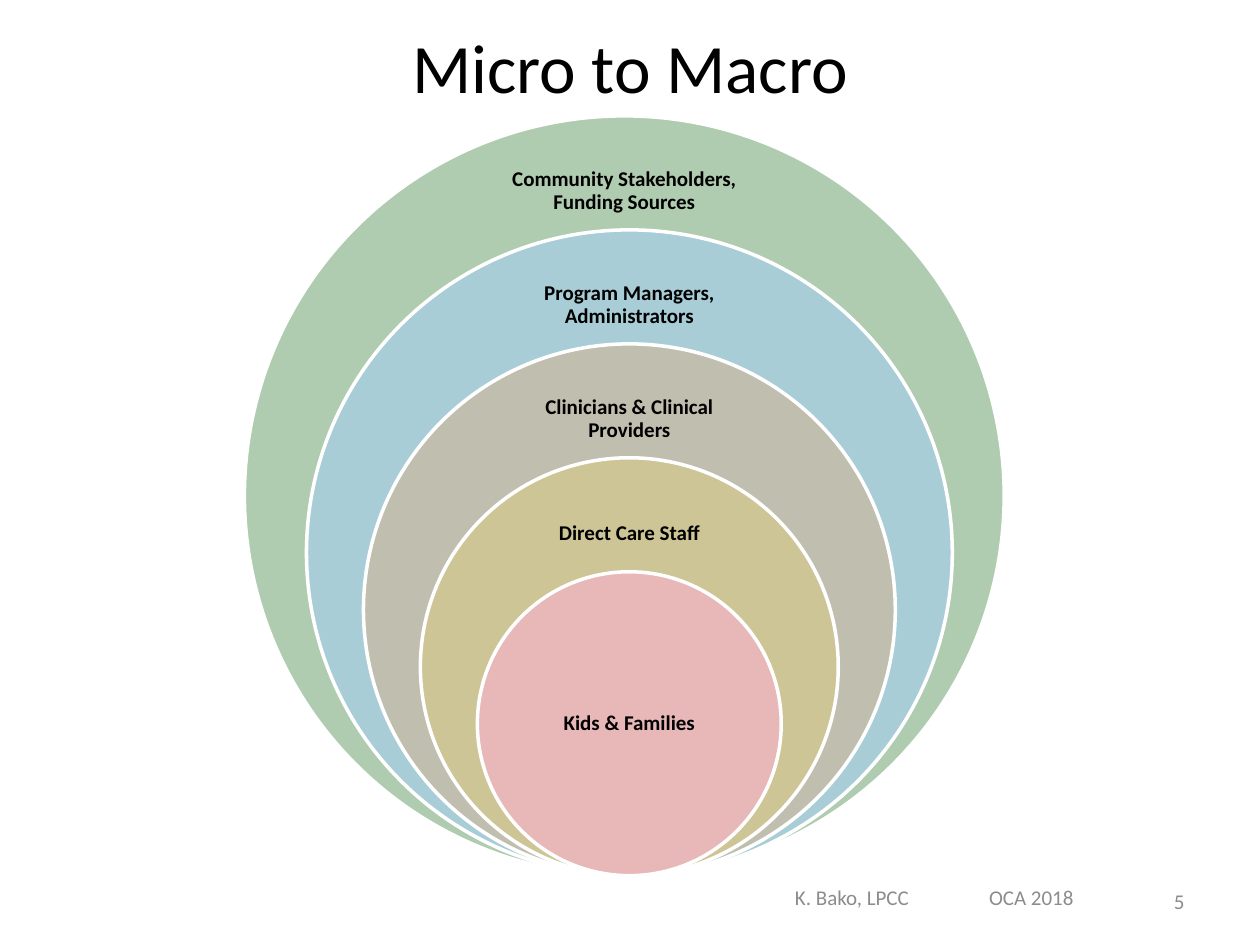
from lxml.etree import SubElement
from pptx import Presentation
from pptx.dml.color import RGBColor
from pptx.enum.shapes import MSO_SHAPE
from pptx.enum.text import MSO_ANCHOR, MSO_AUTO_SIZE, PP_ALIGN
from pptx.oxml.ns import qn
from pptx.util import Inches, Pt

FONT = "Calibri"
BLACK = RGBColor(0x00, 0x00, 0x00)
WHITE = RGBColor(0xFF, 0xFF, 0xFF)
GRAY = RGBColor(0x8C, 0x8C, 0x8C)
GREEN = RGBColor(0xB0, 0xCC, 0xB0)
BLUE = RGBColor(0xA8, 0xCD, 0xD7)
TAUPE = RGBColor(0xC0, 0xBE, 0xAF)
OLIVE = RGBColor(0xCE, 0xC5, 0x97)
PINK = RGBColor(0xE8, 0xB7, 0xB7)

# Label, fill, label width and horizontal shift, from the outer circle inwards
LEVELS = [
    ("Community Stakeholders, Funding Sources", GREEN, 2.26, -0.04),
    ("Program Managers, Administrators", BLUE, 2.21, 0),
    ("Clinicians & Clinical Providers", TAUPE, 2.18, 0),
    ("Direct Care Staff", OLIVE, 1.79, 0),
    ("Kids & Families", PINK, 1.7, 0),
]
DIAMETER_STEP = 0.15  # share of the outer diameter lost at each level


def format_text(shape, text, size, color, alignment, bold=False):
    frame = shape.text_frame
    frame.word_wrap = True
    frame.auto_size = MSO_AUTO_SIZE.NONE
    frame.vertical_anchor = MSO_ANCHOR.MIDDLE
    frame.text = text
    paragraph = frame.paragraphs[0]
    paragraph.alignment = alignment
    font = paragraph.runs[0].font
    font.name, font.size, font.bold = FONT, Pt(size), bold
    font.color.rgb = color
    return paragraph


def add_text(slide, box, *style):
    shape = slide.shapes.add_textbox(*map(Inches, box))
    return shape, format_text(shape, *style)


def place_title(slide, box):
    title = slide.shapes.title
    title.left, title.top, title.width, title.height = map(Inches, box)
    format_text(title, "Micro to Macro", 39.6, BLACK, PP_ALIGN.CENTER)


def add_nested_circles(slide, box):
    left, top, width, height = box
    for level, (label, fill, label_width, shift) in enumerate(LEVELS):
        # All circles rest on the bottom of the box
        diameter = height * (1 - DIAMETER_STEP * level)
        center = left + width / 2 + shift
        circle_top = top + height - diameter
        circle = slide.shapes.add_shape(
            MSO_SHAPE.OVAL, Inches(center - diameter / 2), Inches(circle_top),
            Inches(diameter), Inches(diameter))
        circle.shadow.inherit = False
        circle.fill.solid()
        circle.fill.fore_color.rgb = fill
        circle.line.color.rgb = WHITE
        circle.line.width = Pt(2)

        # Labels sit in the visible ring, the last one in the middle
        innermost = level == len(LEVELS) - 1
        offset, label_height = (diameter / 4, diameter / 2) if innermost else (0.3, 0.6)
        label_box = (center - label_width / 2, circle_top + offset,
                     label_width, label_height)
        shape, paragraph = add_text(slide, label_box, label, 12, BLACK,
                                    PP_ALIGN.CENTER, True)
        frame = shape.text_frame
        frame.margin_left = frame.margin_right = Inches(0.09)
        frame.margin_top = frame.margin_bottom = Inches(0.09)
        paragraph.line_spacing = 0.9


def add_footer(slide, box):
    shape, paragraph = add_text(slide, box, "K. Bako, LPCC\tOCA 2018", 12, GRAY,
                                PP_ALIGN.LEFT)
    shape.text_frame.margin_left = Inches(0.48)
    # A tab stop separates author and event
    tabs = SubElement(paragraph._p.get_or_add_pPr(), qn("a:tabLst"))
    SubElement(tabs, qn("a:tab"), pos=str(Inches(1.54)), algn="l")


def add_slide_number(slide, box):
    add_text(slide, box, "5", 12, GRAY, PP_ALIGN.RIGHT)


def main():
    presentation = Presentation()
    presentation.slide_width = Inches(10)
    presentation.slide_height = Inches(7.5)
    slide = presentation.slides.add_slide(presentation.slide_layouts[5])
    place_title(slide, (0.5, 0.3, 9, 0.45))
    add_footer(slide, (5.83, 6.92, 3.17, 0.4))
    add_slide_number(slide, (7.17, 6.95, 2.33, 0.4))
    add_nested_circles(slide, (1.98, 0.92, 6.03, 6.03))
    presentation.save("out.pptx")


if __name__ == "__main__":
    main()
